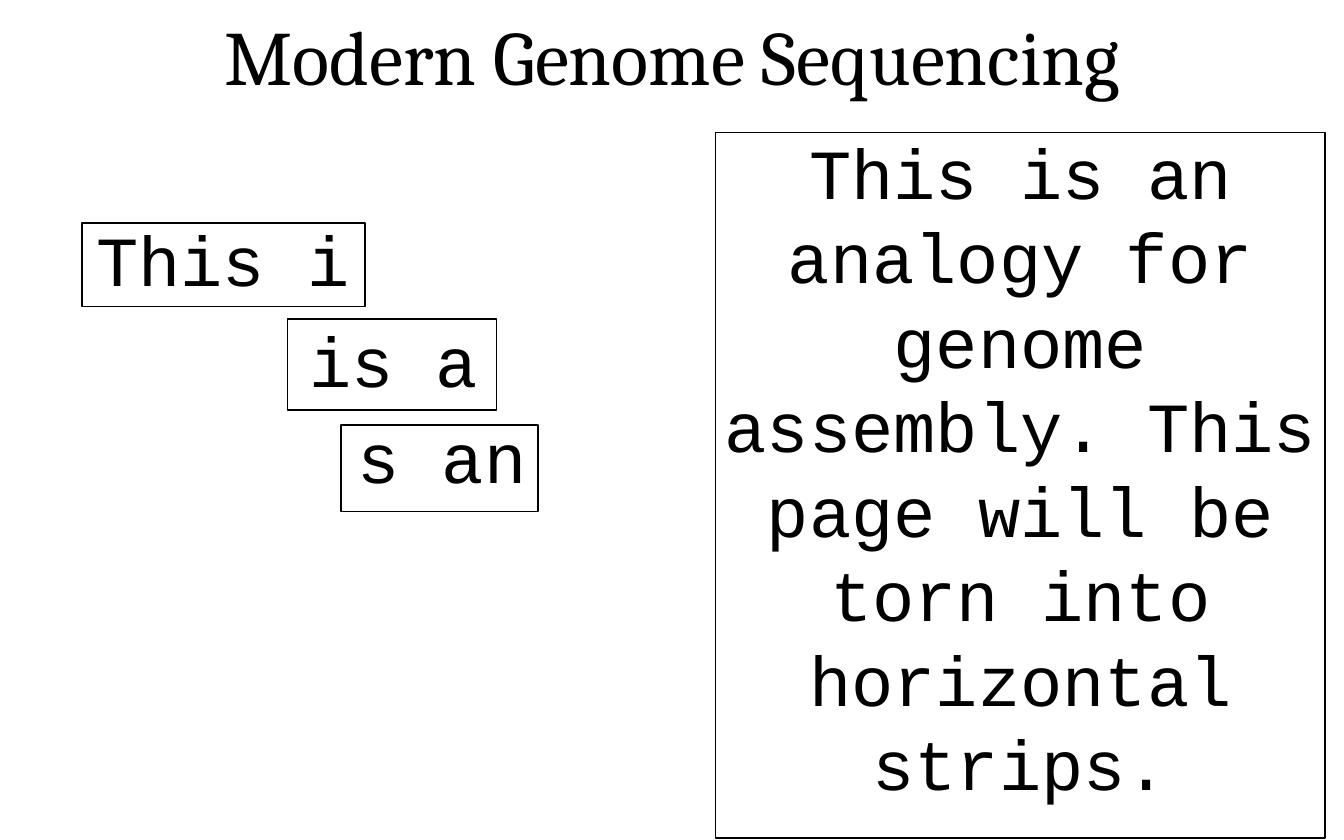
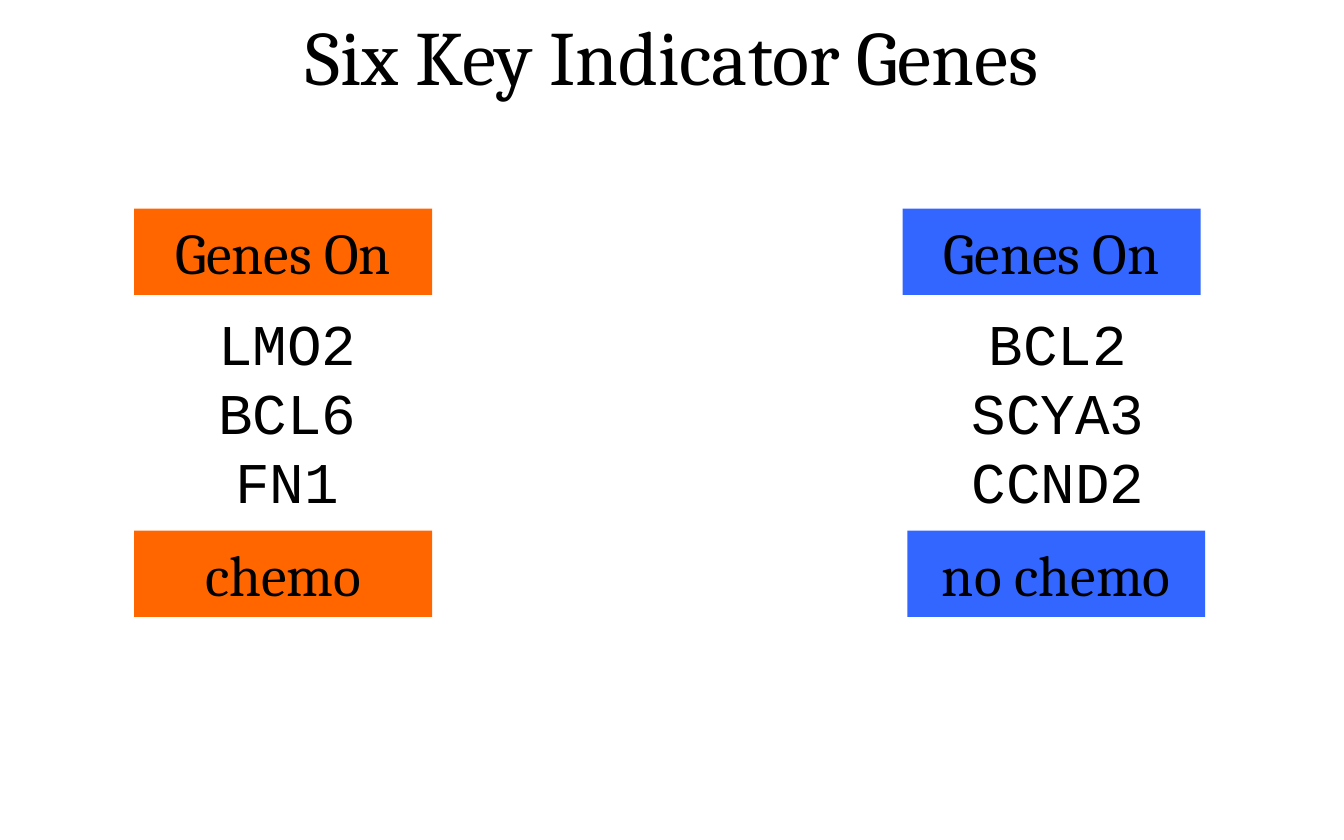
from pptx import Presentation
from pptx.dml.color import RGBColor
from pptx.enum.shapes import MSO_SHAPE
from pptx.enum.text import MSO_ANCHOR, MSO_AUTO_SIZE, PP_ALIGN
from pptx.util import Inches, Pt

BLACK, WHITE = "000000", "FFFFFF"
ORANGE, BLUE = "FF6600", "3366FF"
SERIF, MONO = "Cambria", "Courier New"
PAGE_WIDTH, PAGE_HEIGHT = 23.33, 14.58

# text, frame area, text area, frame fill (areas: left, top, width, height)
STRIPS = [
    ("is a", (4.99, 5.54, 3.63, 1.58), (4.92, 5.46, 3.83, 1.58), None),
    ("s an", (5.92, 7.38, 3.42, 1.5), (5.92, 7.12, 3.5, 1.58), None),
    ("This i", (1.42, 3.87, 4.92, 1.45), (1.5, 3.71, 4.74, 1.57), None),
    ("This is an analogy for genome assembly. "
     "This page will be torn into horizontal strips.",
     (12.42, 2.3, 10.58, 12.25), (12.42, 2.19, 10.58, 11.95), WHITE),
]

GENE_GROUPS = [
    {"colour": ORANGE, "genes": ["LMO2", "BCL6", "FN1"],
     "genes_left": 3.67, "genes_width": 2.63,
     "labels": [("Genes On", 2.33), ("chemo", 2.33)]},
    {"colour": BLUE, "genes": ["BCL2", "SCYA3", "CCND2"],
     "genes_left": 16.75, "genes_width": 3.23,
     "labels": [("Genes On", 15.67), ("no chemo", 15.75)]},
]
LABEL_TOPS = (3.62, 9.21)
LABEL_WIDTH, LABEL_HEIGHT = 5.17, 1.5
GENES_TOP, GENES_HEIGHT = 5.29, 3.74


def colour(value):
    return RGBColor.from_string(value)


def inches(area):
    return [Inches(length) for length in area]


def write(box, lines, font, size):
    """Put each line in its own centred paragraph."""
    frame = box.text_frame
    for index, line in enumerate(lines):
        para = frame.add_paragraph() if index else frame.paragraphs[0]
        para.alignment = PP_ALIGN.CENTER
        span = para.add_run()
        span.text = line
        span.font.name = font
        span.font.size = Pt(size)
        span.font.color.rgb = colour(BLACK)


def add_text(shapes, area, lines, font, size, wrap=True, grow=True):
    box = shapes.add_textbox(*inches(area))
    box.text_frame.word_wrap = wrap
    if grow:
        box.text_frame.auto_size = MSO_AUTO_SIZE.SHAPE_TO_FIT_TEXT
    write(box, lines, font, size)
    return box


def add_rectangle(shapes, area, fill=None, outline=None):
    box = shapes.add_shape(MSO_SHAPE.RECTANGLE, *inches(area))
    box.shadow.inherit = False
    if fill:
        box.fill.solid()
        box.fill.fore_color.rgb = colour(fill)
    else:
        box.fill.background()
    if outline:
        box.line.color.rgb = colour(outline)
        box.line.width = Pt(2)
    else:
        box.line.fill.background()
    return box


def add_page(deck, title):
    page = deck.slides.add_slide(deck.slide_layouts[6])
    box = add_text(page.shapes, (0, 0.04, PAGE_WIDTH, 2.43), [title],
                   SERIF, 96, grow=False)
    frame = box.text_frame
    frame.margin_left = frame.margin_right = Inches(0.22)
    frame.margin_top = frame.margin_bottom = Inches(0.11)
    return page


def build_sequencing(deck):
    page = add_page(deck, "Modern Genome Sequencing")
    for text, frame_area, text_area, fill in STRIPS:
        strip = page.shapes.add_group_shape()
        add_rectangle(strip.shapes, frame_area, fill, BLACK)
        add_text(strip.shapes, text_area, [text], MONO, 88)


def build_genes(deck):
    page = add_page(deck, "Six Key Indicator Genes")
    for group in GENE_GROUPS:
        for (text, left), top in zip(group["labels"], LABEL_TOPS):
            label = add_rectangle(page.shapes, (left, top, LABEL_WIDTH, LABEL_HEIGHT),
                                  group["colour"])
            label.text_frame.vertical_anchor = MSO_ANCHOR.MIDDLE
            write(label, [text], SERIF, 72)
        area = (group["genes_left"], GENES_TOP, group["genes_width"], GENES_HEIGHT)
        add_text(page.shapes, area, group["genes"], MONO, 72, wrap=False)


def main():
    deck = Presentation()
    deck.slide_width, deck.slide_height = inches((PAGE_WIDTH, PAGE_HEIGHT))
    build_sequencing(deck)
    build_genes(deck)
    deck.save("out.pptx")


if __name__ == "__main__":
    main()
